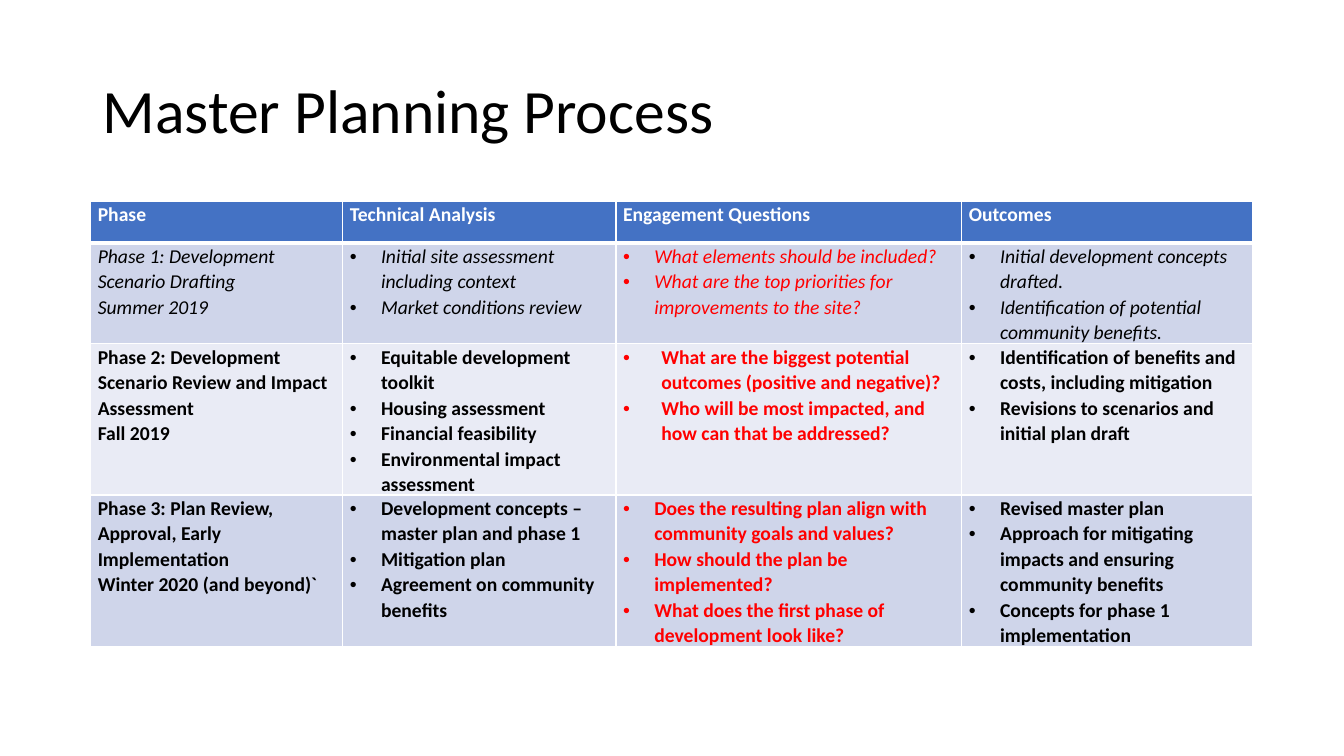
from dataclasses import dataclass

from lxml import etree
from pptx import Presentation
from pptx import util as u
from pptx.dml.color import RGBColor
from pptx.enum import text
from pptx.oxml import ns


@dataclass(frozen=True)
class Theme:
    font: str = "Calibri"
    title_size: int = 44
    body_size: int = 14
    ink: str = "000000"
    accent: str = "FF0000"
    paper: str = "FFFFFF"
    header: str = "4472C4"
    bands: tuple = ("CFD5EA", "E9EBF5")
    rule: int = 1
    header_rule: int = 3


THEME = Theme()
SLIDE_WIDTH, SLIDE_HEIGHT = 13.33, 7.5
COLUMNS = (2.5, 2.71, 3.43, 2.88)
ROWS = (0.41, 1.0, 1.5, 1.5)
PHASE_COLUMN, QUESTION_COLUMN = 0, 2
CURRENT_PHASE, REVIEW_PHASE = 1, 2
INDENT, WIDE_INDENT = 0.31, 0.38

HEADINGS = ("Phase", "Technical Analysis", "Engagement Questions", "Outcomes")
PHASES = (
    (
        ("Phase 1: Development Scenario Drafting", "Summer 2019"),
        ("Initial site assessment including context", "Market conditions review"),
        ("What elements should be included?",
         "What are the top priorities for improvements to the site?"),
        ("Initial development concepts drafted.",
         "Identification of potential community benefits."),
    ),
    (
        ("Phase 2: Development Scenario Review and Impact Assessment", "Fall 2019"),
        ("Equitable development toolkit", "Housing assessment",
         "Financial feasibility", "Environmental impact assessment"),
        ("What are the biggest potential outcomes (positive and negative)?",
         "Who will be most impacted, and how can that be addressed?"),
        ("Identification of benefits and costs, including mitigation",
         "Revisions to scenarios and initial plan draft"),
    ),
    (
        ("Phase 3: Plan Review, Approval, Early Implementation",
         "Winter 2020 (and beyond)`"),
        ("Development concepts – master plan and phase 1", "Mitigation plan",
         "Agreement on community benefits"),
        ("Does the resulting plan align with community goals and values?",
         "How should the plan be implemented?",
         "What does the first phase of development look like?"),
        ("Revised master plan",
         "Approach for mitigating impacts and ensuring community benefits",
         "Concepts for phase 1 implementation"),
    ),
)


def add_bullet(para, indent):
    properties = para._p.get_or_add_pPr()
    properties.set("marL", str(u.Inches(indent)))
    properties.set("indent", str(-u.Inches(indent)))
    etree.SubElement(properties, ns.qn("a:buFont"), typeface="Arial")
    etree.SubElement(properties, ns.qn("a:buChar"), char="•")


def write(frame, lines, *, size=THEME.body_size, color=THEME.ink, bold=False,
          italic=False, spacing=1.07, indent=0):
    """Fill a text frame, one paragraph a line; an indent adds bullets."""
    frame.word_wrap = True
    for index, line in enumerate(lines):
        para = frame.add_paragraph() if index else frame.paragraphs[0]
        para.line_spacing = spacing
        if indent:
            add_bullet(para, indent)
        span = para.add_run()
        span.text = line
        span.font.name = THEME.font
        span.font.size = u.Pt(size)
        span.font.bold = bold
        span.font.italic = italic
        span.font.color.rgb = RGBColor.from_string(color)


def add_title(page, title):
    box = page.shapes.add_textbox(
        u.Inches(0.92), u.Inches(0.4), u.Inches(11.5), u.Inches(1.45))
    box.text_frame.vertical_anchor = text.MSO_ANCHOR.MIDDLE
    write(box.text_frame, [title], size=THEME.title_size, spacing=0.9)


def set_borders(cell, **widths):
    properties = cell._tc.get_or_add_tcPr()
    for side in "LRTB":
        width = u.Pt(widths.get(side, THEME.rule))
        line = etree.SubElement(properties, ns.qn(f"a:ln{side}"), w=str(width))
        fill = etree.SubElement(line, ns.qn("a:solidFill"))
        etree.SubElement(fill, ns.qn("a:srgbClr"), val=THEME.paper)


def style_cell(cell, fill, **border_widths):
    cell.margin_left = cell.margin_right = u.Inches(0.07)
    cell.margin_top = cell.margin_bottom = 0
    set_borders(cell, **border_widths)
    cell.fill.solid()
    cell.fill.fore_color.rgb = RGBColor.from_string(fill)


def fill_header(table):
    for column, heading in enumerate(HEADINGS):
        cell = table.cell(0, column)
        style_cell(cell, THEME.header, B=THEME.header_rule)
        write(cell.text_frame, [heading], color=THEME.paper, bold=True)


def fill_phase(table, row, phase):
    """Write one phase: the current one in italics, later ones in bold."""
    current = row == CURRENT_PHASE
    top_rule = THEME.header_rule if current else THEME.rule
    for column, lines in enumerate(phase):
        question = column == QUESTION_COLUMN
        indent = WIDE_INDENT if question and row == REVIEW_PHASE else INDENT
        cell = table.cell(row, column)
        style_cell(cell, THEME.bands[(row - 1) % 2], T=top_rule)
        write(cell.text_frame, lines, bold=not current, italic=current,
              color=THEME.accent if question else THEME.ink,
              indent=0 if column == PHASE_COLUMN else indent)


def add_phase_table(page):
    table = page.shapes.add_table(
        len(ROWS), len(COLUMNS), u.Inches(0.9), u.Inches(2),
        u.Inches(sum(COLUMNS)), u.Inches(sum(ROWS))).table
    for column, width in zip(table.columns, COLUMNS):
        column.width = u.Inches(width)
    for row, height in zip(table.rows, ROWS):
        row.height = u.Inches(height)
    fill_header(table)
    for row, phase in enumerate(PHASES, start=1):
        fill_phase(table, row, phase)


def main():
    deck = Presentation()
    deck.slide_width = u.Inches(SLIDE_WIDTH)
    deck.slide_height = u.Inches(SLIDE_HEIGHT)
    page = deck.slides.add_slide(deck.slide_layouts[6])
    add_title(page, "Master Planning Process")
    add_phase_table(page)
    deck.save("out.pptx")


if __name__ == "__main__":
    main()
